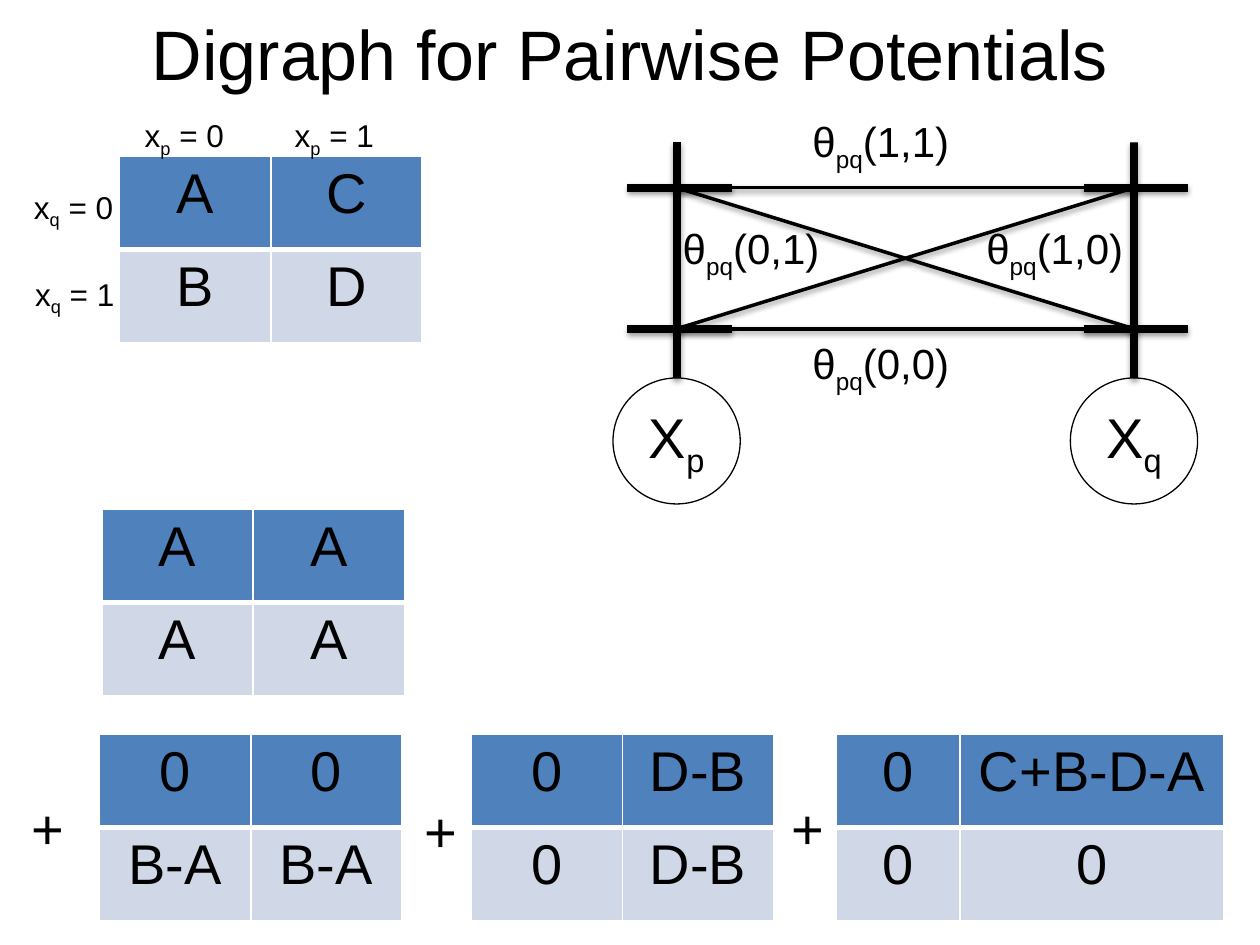
from dataclasses import dataclass

from lxml import etree
from pptx import Presentation
from pptx.dml.color import RGBColor
from pptx.enum.shapes import MSO_CONNECTOR, MSO_SHAPE
from pptx.enum.text import MSO_ANCHOR, MSO_AUTO_SIZE, PP_ALIGN
from pptx.oxml import parse_xml
from pptx.oxml.ns import nsdecls, qn
from pptx.util import Inches, Pt

CENTER, LEFT, MIDDLE = PP_ALIGN.CENTER, PP_ALIGN.LEFT, MSO_ANCHOR.MIDDLE
GROW = MSO_AUTO_SIZE.SHAPE_TO_FIT_TEXT
STRAIGHT, OVAL = MSO_CONNECTOR.STRAIGHT, MSO_SHAPE.OVAL


@dataclass(frozen=True)
class Theme:
    font: str = "Arial"
    ink: RGBColor = RGBColor(0, 0, 0)
    header: RGBColor = RGBColor(0x4F, 0x81, 0xBD)
    body: RGBColor = RGBColor(0xD0, 0xD8, 0xE8)
    border: str = "FFFFFF"
    title: int = 40
    large: int = 32
    potential: int = 24
    label: int = 18
    rail: float = 4.5
    edge: float = 2


THEME = Theme()
SHADOW = f"""<a:effectLst {nsdecls('a')}>
  <a:outerShdw blurRad="40000" dist="20000" dir="5400000" rotWithShape="0">
    <a:srgbClr val="000000"><a:alpha val="38000"/></a:srgbClr>
  </a:outerShdw></a:effectLst>"""

# Grid shared by the tables, and the rails of the digraph
CELL_W, CELL_H = 1.2, 0.74
SUM_ROW = 5.83
P_RAIL, Q_RAIL = 5.37, 9
LABEL_1, LABEL_0 = 1.49, 2.61
RAIL_TOP, NODE_TOP, NODE_W, NODE_H = 1.13, 3, 1.01, 1
TICK = 0.83

deck = Presentation()
deck.slide_width, deck.slide_height = Inches(10), Inches(7.5)
slide = deck.slides.add_slide(deck.slide_layouts[5])
shapes = slide.shapes


def write(frame, parts, size, align=LEFT):
    """Fill a frame with a base, an optional subscript and an optional rest."""
    paragraph = frame.paragraphs[0]
    paragraph.alignment = align
    for index, part in enumerate(parts):
        run = paragraph.add_run()
        run.text = part
        run.font.name, run.font.size = THEME.font, Pt(size)
        run.font.color.rgb = THEME.ink
        if index == 1:
            run.font._element.set("baseline", "-25000")


def draw_line(start, end, weight):
    line = shapes.add_connector(STRAIGHT, *map(Inches, start + end))
    line.line.color.rgb = THEME.ink
    line.line.width = Pt(weight)
    line._element.spPr.append(parse_xml(SHADOW))
    return line


title = shapes.title
title.left, title.top = Inches(0.5), Inches(0.06)
title.width, title.height = Inches(9), Inches(0.71)
title.text_frame.vertical_anchor = MIDDLE
write(title.text_frame, ["Digraph for Pairwise Potentials"], THEME.title, CENTER)

# Variable nodes, each with a rail and a tick for either label
for variable, rail, tick_left in (("p", P_RAIL, 4.98), ("q", Q_RAIL, 8.6)):
    node = shapes.add_shape(OVAL, Inches(rail - NODE_W / 2), Inches(NODE_TOP),
                            Inches(NODE_W), Inches(NODE_H))
    node.shadow.inherit = False
    node.fill.background()
    node.line.color.rgb, node.line.width = THEME.ink, Pt(0.75)
    node.text_frame.word_wrap = False
    node.text_frame.vertical_anchor = MIDDLE
    write(node.text_frame, ["X", variable], THEME.large, CENTER)
    stem = draw_line((rail, RAIL_TOP), (rail, NODE_TOP), THEME.rail)
    stem.end_connect(node, 0)
    for level in (LABEL_0, LABEL_1):
        draw_line((tick_left, level), (tick_left + TICK, level), THEME.rail)

for p_level in (LABEL_0, LABEL_1):
    for q_level in (LABEL_0, LABEL_1):
        draw_line((P_RAIL, p_level), (Q_RAIL, q_level), THEME.edge)

# Potential tables: the pairwise costs, then the terms they split into
tables = [
    (0.95, 1.24, (CELL_W, CELL_W), (("A", "C"), ("B", "D"))),
    (0.81, 4.04, (CELL_W, CELL_W), (("A", "A"), ("A", "A"))),
    (0.79, SUM_ROW, (CELL_W, CELL_W), (("0", "0"), ("B-A", "B-A"))),
    (3.74, SUM_ROW, (CELL_W, CELL_W), (("0", "D-B"), ("0", "D-B"))),
    (6.64, SUM_ROW, (0.98, 2.09), (("0", "C+B-D-A"), ("0", "0"))),
]
for left, top, widths, costs in tables:
    table = shapes.add_table(2, 2, Inches(left), Inches(top),
                             Inches(sum(widths)), Inches(2 * CELL_H)).table
    table.first_row = table.horz_banding = False
    for column, width in zip(table.columns, widths):
        column.width = Inches(width)
    for r, row_costs in enumerate(costs):
        table.rows[r].height = Inches(CELL_H)
        for c, cost in enumerate(row_costs):
            cell = table.cell(r, c)
            write(cell.text_frame, [cost], THEME.large, CENTER)
            properties = cell._tc.get_or_add_tcPr()
            for side in "LRTB":
                weight = 3 if r == 0 and side == "B" else 1
                border = etree.SubElement(properties, qn(f"a:ln{side}"), w=str(Pt(weight)))
                paint = etree.SubElement(border, qn("a:solidFill"))
                etree.SubElement(paint, qn("a:srgbClr"), val=THEME.border)
            cell.fill.solid()
            cell.fill.fore_color.rgb = THEME.body if r else THEME.header

# Free labels: left, top, width, height, size, parts
axis = (0.85, 0.4, THEME.label)
potential = (1.33, 0.5, THEME.potential)
plus = (0.46, 0.64, THEME.large)
labels = [
    (1.05, 0.87, *axis, ("x", "p", " = 0")),
    (2.24, 0.87, *axis, ("x", "p", " = 1")),
    (0.17, 1.44, *axis, ("x", "q", " = 0")),
    (0.18, 2.13, *axis, ("x", "q", " = 1")),
    (5.32, 1.72, *potential, ("θ", "pq", "(0,1)")),
    (7.73, 1.72, *potential, ("θ", "pq", "(1,0)")),
    (6.35, 2.63, *potential, ("θ", "pq", "(0,0)")),
    (6.35, 0.87, *potential, ("θ", "pq", "(1,1)")),
    (0.15, 6.25, *plus, ("+",)),
    (3.27, 6.27, *plus, ("+",)),
    (6.18, 6.25, *plus, ("+",)),
]
for left, top, width, height, size, parts in labels:
    frame = shapes.add_textbox(*map(Inches, (left, top, width, height))).text_frame
    frame.word_wrap = False
    frame.auto_size = GROW
    write(frame, parts, size)

deck.save("out.pptx")
